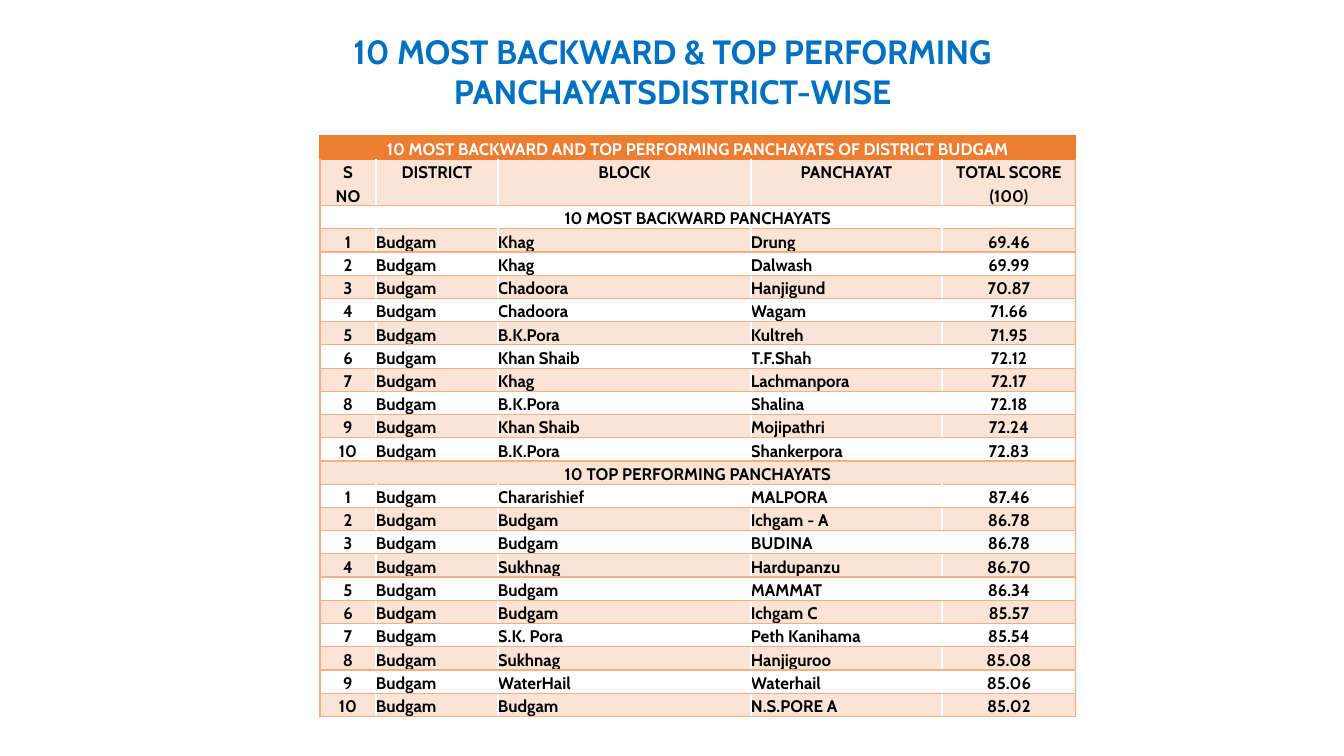
from lxml.etree import SubElement
from pptx import Presentation
from pptx.dml.color import RGBColor
from pptx.enum.text import MSO_ANCHOR, MSO_AUTO_SIZE, PP_ALIGN
from pptx.oxml.ns import qn
from pptx.util import Pt

PX = 914400 / 100.8
FONT = "Cabin"
COLORS = {
    "title": "0070C0",
    "banner": "ED7D31",
    "rule": "F4B083",
    "band": "FBE4D5",
    "white": "FFFFFF",
    "black": "000000",
}
COLUMN_WIDTHS = [56, 122, 253, 191, 134]
ROW_HEIGHT = 21
HEADING_HEIGHT = 44
DISTRICT = "Budgam"
BANNER = "10 MOST BACKWARD AND TOP PERFORMING PANCHAYATS OF DISTRICT BUDGAM"
HEADINGS = ["S\nNO", "DISTRICT", "BLOCK", "PANCHAYAT", "TOTAL SCORE\n(100)"]
SECTIONS = {
    "10 MOST BACKWARD PANCHAYATS": [
        ("Khag", "Drung", "69.46"),
        ("Khag", "Dalwash", "69.99"),
        ("Chadoora", "Hanjigund", "70.87"),
        ("Chadoora", "Wagam", "71.66"),
        ("B.K.Pora", "Kultreh", "71.95"),
        ("Khan Shaib", "T.F.Shah", "72.12"),
        ("Khag", "Lachmanpora", "72.17"),
        ("B.K.Pora", "Shalina", "72.18"),
        ("Khan Shaib", "Mojipathri", "72.24"),
        ("B.K.Pora", "Shankerpora", "72.83"),
    ],
    "10 TOP PERFORMING PANCHAYATS": [
        ("Chararishief", "MALPORA", "87.46"),
        ("Budgam", "Ichgam - A", "86.78"),
        ("Budgam", "BUDINA", "86.78"),
        ("Sukhnag", "Hardupanzu", "86.70"),
        ("Budgam", "MAMMAT", "86.34"),
        ("Budgam", "Ichgam C", "85.57"),
        ("S.K. Pora", "Peth Kanihama", "85.54"),
        ("Sukhnag", "Hanjiguroo", "85.08"),
        ("WaterHail", "Waterhail", "85.06"),
        ("Budgam", "N.S.PORE A", "85.02"),
    ],
}


def px(length):
    """Turn px into EMU."""
    return round(length * PX)


def write_text(frame, text, size=12, color="black", align=PP_ALIGN.CENTER,
               spacing=1.15, margin=0):
    """Fill a text frame, one paragraph for each line of text."""
    frame.word_wrap = True
    frame.margin_left = frame.margin_right = px(margin)
    frame.margin_top = frame.margin_bottom = px(margin)
    frame.text = text
    for para in frame.paragraphs:
        para.alignment = align
        para.line_spacing = spacing
        for span in para.runs:
            span.font.name = FONT
            span.font.size = Pt(size)
            span.font.bold = True
            span.font.color.rgb = RGBColor.from_string(COLORS[color])


def draw_borders(cell, sides):
    """Draw one-point borders, given as a dict of side letter to colour name."""
    properties = cell._tc.get_or_add_tcPr()
    for side in "LRTB":
        if side in sides:
            line = SubElement(properties, qn(f"a:ln{side}"), w=str(Pt(1)))
            fill = SubElement(line, qn("a:solidFill"))
            SubElement(fill, qn("a:srgbClr"), val=COLORS[sides[side]])


def add_title(page, left, top, width, height):
    """Place and format the slide title."""
    box = page.shapes.title
    box.left, box.top, box.width, box.height = map(px, (left, top, width, height))
    write_text(box.text_frame,
               "10 MOST BACKWARD & TOP PERFORMING PANCHAYATSDISTRICT-WISE",
               size=24, color="title", spacing=1.0, margin=5)
    box.text_frame.vertical_anchor = MSO_ANCHOR.MIDDLE
    box.text_frame.auto_size = MSO_AUTO_SIZE.SHAPE_TO_FIT_TEXT


def table_rows():
    """List the texts of every row; a row of one text spans the table."""
    rows = [[BANNER], HEADINGS]
    for heading, panchayats in SECTIONS.items():
        rows.append([heading])
        for number, panchayat in enumerate(panchayats, 1):
            rows.append([str(number), DISTRICT, *panchayat])
    return rows


def fill_row(table, index, texts):
    """Write one row with its band, borders and alignment."""
    last = len(COLUMN_WIDTHS) - 1
    if len(texts) == 1:
        table.cell(index, 0).merge(table.cell(index, last))
    rule = "banner" if index == 0 else "rule"
    top = "banner" if index <= 1 else "rule"
    for column in range(last + 1):
        cell = table.cell(index, column)
        sides = {"T": top, "B": rule}
        if column == 0:
            sides["L"] = rule
        if column == last or len(texts) == 1:
            sides["R"] = rule
        draw_borders(cell, sides)
        if index == 0 or index % 2:
            cell.fill.solid()
            name = "band" if index else "banner"
            cell.fill.fore_color.rgb = RGBColor.from_string(COLORS[name])
        else:
            cell.fill.background()
        cell.margin_left = cell.margin_right = 0
        cell.margin_top = cell.margin_bottom = 0
        if column < len(texts):
            centred = index <= 1 or column in (0, last)
            write_text(cell.text_frame, texts[column],
                       color="black" if index else "white",
                       align=PP_ALIGN.CENTER if centred else PP_ALIGN.LEFT)


def add_score_table(page, left, top):
    """Place the table of panchayat scores."""
    rows = table_rows()
    heights = [HEADING_HEIGHT if texts is HEADINGS else ROW_HEIGHT
               for texts in rows]
    table = page.shapes.add_table(
        len(rows), len(COLUMN_WIDTHS), px(left), px(top),
        px(sum(COLUMN_WIDTHS)), px(sum(heights))).table
    table.first_row = table.horz_banding = False
    for column, width in zip(table.columns, COLUMN_WIDTHS):
        column.width = px(width)
    for index, (texts, height) in enumerate(zip(rows, heights)):
        table.rows[index].height = px(height)
        fill_row(table, index, texts)


def main():
    """Build and save the deck."""
    deck = Presentation()
    deck.slide_width, deck.slide_height = px(1344), px(756)
    page = deck.slides.add_slide(deck.slide_layouts[5])
    add_title(page, 224, 25, 897, 92)
    add_score_table(page, 320, 136)
    deck.save("out.pptx")


if __name__ == "__main__":
    main()
